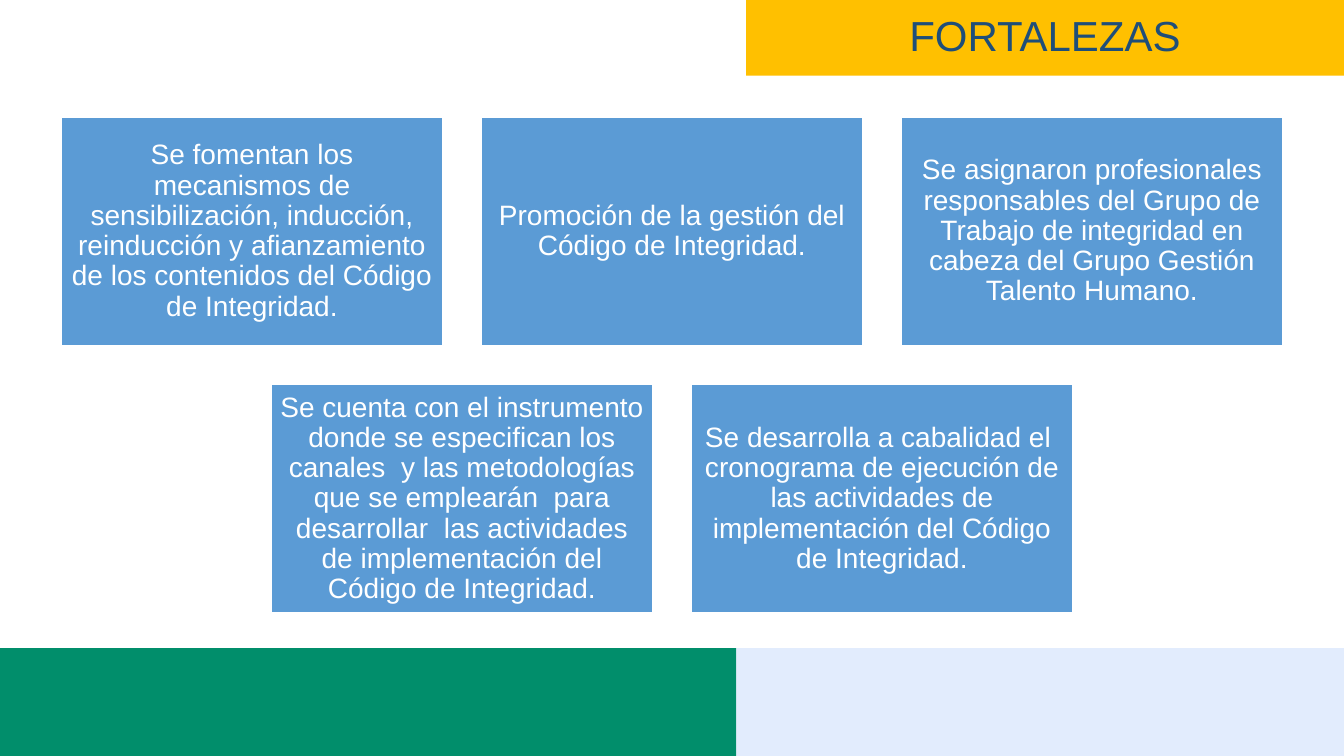
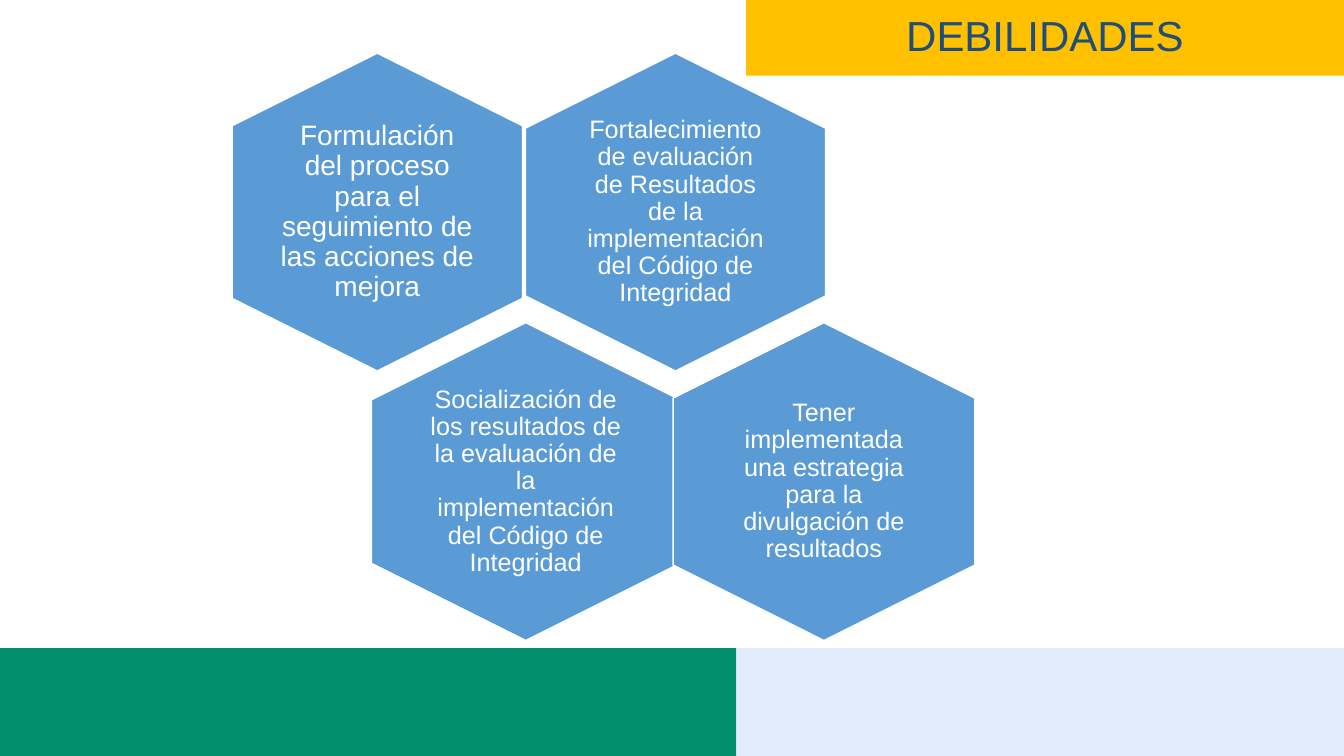
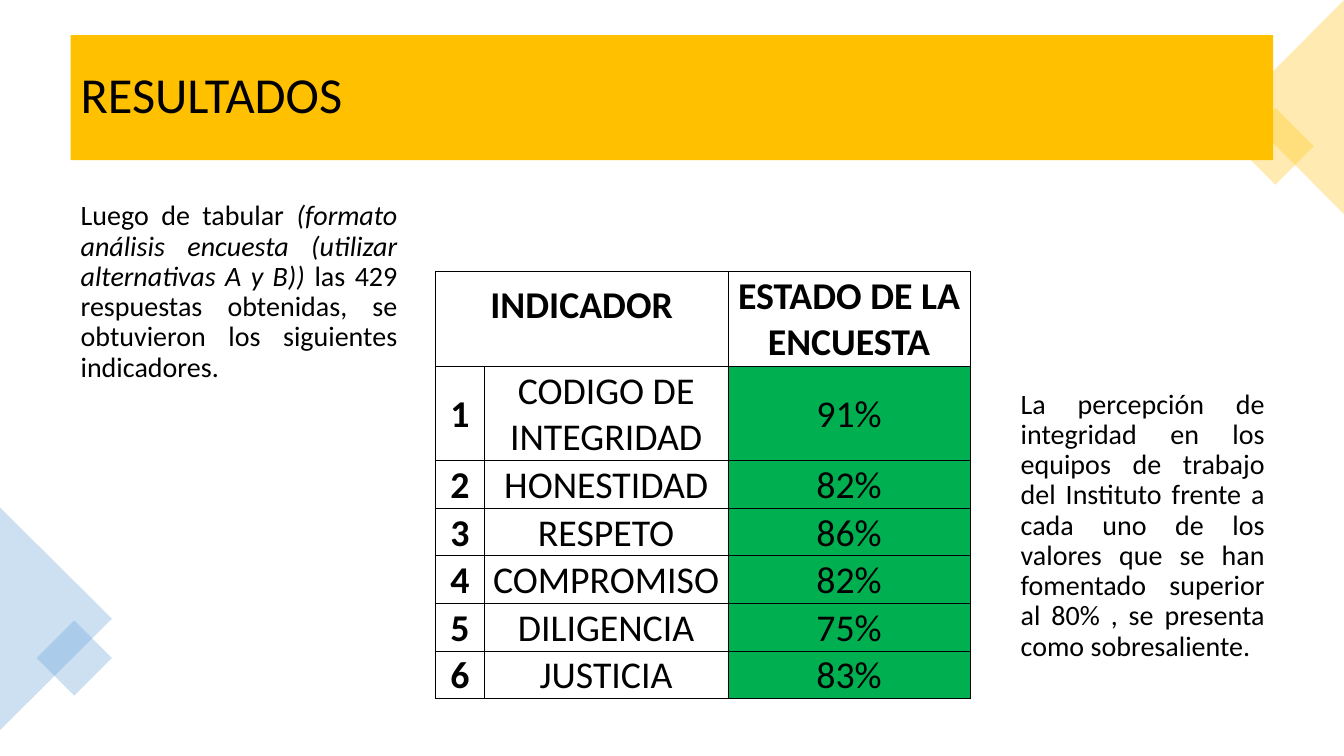
"""Build three slides on integrity: strengths, weaknesses and survey results."""
import pptx
import pptx.util
import pptx.dml.color
import pptx.enum.shapes
import pptx.enum.text
import pptx.oxml.ns
import lxml.etree

Pt = pptx.util.Pt
qn = pptx.oxml.ns.qn
KIND = pptx.enum.shapes.MSO_SHAPE
ALIGN = pptx.enum.text.PP_ALIGN
ANCHOR = pptx.enum.text.MSO_ANCHOR

WIDE, HIGH = 960, 540
HUES = {
    "white": "FFFFFF",
    "black": "000000",
    "navy": "1F4E79",
    "blue": "5B9BD5",
    "gold": "FFC000",
    "green": "018E6B",
    "pale": "E2ECFD",
    "good": "00B050",
}


def hue(name):
    return pptx.dml.color.RGBColor.from_string(HUES[name])


def write(frame, *parts, size=20, font="Arial", color="white", bold=False,
          align=ALIGN.CENTER, lead=0.9):
    para = frame.paragraphs[0]
    para.alignment = align
    para.line_spacing = lead
    for part in parts:
        text, slant = part if isinstance(part, tuple) else (part, False)
        run = para.add_run()
        run.text = text
        run.font.size = Pt(size)
        run.font.name = font
        run.font.bold = bold
        run.font.italic = slant
        run.font.color.rgb = hue(color)


def fit(frame, pad=None, anchor=ANCHOR.MIDDLE):
    frame.word_wrap = True
    frame.vertical_anchor = anchor
    if pad is not None:
        frame.margin_left = frame.margin_right = Pt(pad)
        frame.margin_top = frame.margin_bottom = Pt(pad)
    return frame


def block(slide, x, y, w, h, fill, kind=KIND.RECTANGLE, line=None, turn=0):
    shape = slide.shapes.add_shape(kind, Pt(x), Pt(y), Pt(w), Pt(h))
    shape.shadow.inherit = False
    shape.rotation = turn
    shape.fill.solid()
    shape.fill.fore_color.rgb = hue(fill)
    if line:
        shape.line.color.rgb = hue(line)
        shape.line.width = Pt(1)
    else:
        shape.line.fill.background()
    return shape


def label(slide, x, y, w, h, *parts, pad=None, anchor=ANCHOR.MIDDLE, **form):
    area = slide.shapes.add_textbox(Pt(x), Pt(y), Pt(w), Pt(h))
    write(fit(area.text_frame, pad, anchor), *parts, **form)


def title(slide, text, x=533, y=0, w=427, h=54, **form):
    bar = block(slide, x, y, w, h, "gold")
    write(fit(bar.text_frame), text, **{"size": 30, "color": "navy", **form})


def bands(slide):
    split, top = 526, 463
    block(slide, 0, top, split, HIGH - top, "green")
    block(slide, split, top, WIDE - split, HIGH - top, "pale")


def cards(slide, rows):
    w, h, top, step, drop = 273, 163.5, 83.5, 300, 191
    for row, texts in enumerate(rows):
        left = (WIDE - w - step * (len(texts) - 1)) / 2
        for col, text in enumerate(texts):
            card = block(slide, left + col * step, top + row * drop, w, h,
                         "blue", line="white")
            write(fit(card.text_frame, 5.7), text)


def hexes(slide, items):
    tall, deep = 227, 153
    for x, y, wide, pad, size, text in items:
        cell = block(slide, x - tall / 2, y - wide / 2, tall, wide, "blue",
                     KIND.HEXAGON, "white", 90)
        cell.adjustments[0] = 0.25
        inner = wide * 0.68
        label(slide, x - inner / 2, y - deep / 2, inner, deep, text,
              pad=pad, size=size)


def decor(slide, fill, items):
    for kind, x, y, w, h, turn in items:
        shape = block(slide, x - w / 2, y - h / 2, w, h, fill, kind, turn=turn)
        tint = shape.element.spPr.find(qn("a:solidFill"))[0]
        lxml.etree.SubElement(tint, qn("a:alpha")).set("val", "30000")


def edge(cell):
    props = cell._tc.get_or_add_tcPr()
    for side in "LRTB":
        line = lxml.etree.SubElement(props, qn("a:ln" + side))
        line.set("w", str(Pt(0.5)))
        paint = lxml.etree.SubElement(line, qn("a:solidFill"))
        tint = lxml.etree.SubElement(paint, qn("a:srgbClr"))
        tint.set("val", HUES["black"])


def grid(slide, x, y, cols, rows, data):
    table = slide.shapes.add_table(len(rows), len(cols), Pt(x), Pt(y),
                                   Pt(sum(cols)), Pt(sum(rows))).table
    table.first_row = table.horz_banding = False
    for col, width in zip(table.columns, cols):
        col.width = Pt(width)
    for row, height in zip(table.rows, rows):
        row.height = Pt(height)
    for r, texts in enumerate(data):
        for c, text in enumerate(texts):
            cell = table.cell(r, c)
            edge(cell)
            head = r == 0 and c == 0
            cell.margin_left = cell.margin_right = Pt(16 if head else 1.5)
            cell.margin_top = Pt(8 if head else 1.5)
            cell.margin_bottom = Pt(8 if head else 0)
            cell.vertical_anchor = ANCHOR.TOP if head else ANCHOR.MIDDLE
            if r and c == 2:
                cell.fill.solid()
                cell.fill.fore_color.rgb = hue("good")
            else:
                cell.fill.background()
            if text:
                write(cell.text_frame, text, size=27, font="Calibri",
                      color="black", bold=r == 0 or c == 0, lead=1.0)
    table.cell(0, 0).merge(table.cell(0, 1))


def strengths(slide):
    bands(slide)
    title(slide, "FORTALEZAS")
    cards(slide, [
        ["Se fomentan los mecanismos de sensibilización, inducción, "
         "reinducción y afianzamiento de los contenidos del Código de "
         "Integridad.",
         "Promoción de la gestión del Código de Integridad.",
         "Se asignaron profesionales responsables del Grupo de Trabajo de "
         "integridad en cabeza del Grupo Gestión Talento Humano."],
        ["Se cuenta con el instrumento donde se especifican los canales  y "
         "las metodologías que se emplearán  para desarrollar  las "
         "actividades de implementación del Código de Integridad.",
         "Se desarrolla a cabalidad el  cronograma de ejecución de las "
         "actividades de implementación del Código de Integridad."],
    ])


def limits(slide):
    bands(slide)
    title(slide, "DEBILIDADES")
    upper, lower = 151.5, 344
    hexes(slide, [
        (482.5, upper, 214.5, 5, 18,
         "Fortalecimiento de evaluación de Resultados de la implementación "
         "del Código de Integridad"),
        (269.5, upper, 207.5, 0, 20,
         "Formulación del proceso para el seguimiento de las acciones de "
         "mejora"),
        (375.5, lower, 220.5, 5, 18,
         "Socialización de los resultados de la evaluación de la "
         "implementación del Código de Integridad"),
        (588.5, lower, 215.5, 0, 18,
         "Tener implementada una estrategia para la divulgación de "
         "resultados"),
    ])


def results(slide):
    plain = {"font": "Calibri", "color": "black"}
    prose = {"align": ALIGN.JUSTIFY, "anchor": ANCHOR.TOP, **plain}
    title(slide, "RESULTADOS", 50.5, 25, 859, 89.5, size=36,
          align=ALIGN.LEFT, **plain)
    label(slide, 50.5, 140.5, 240.5, 346, "Luego de tabular ",
          ("(formato análisis encuesta (utilizar alternativas A y B)) ", True),
          "las 429 respuestas obtenidas, se obtuvieron los siguientes "
          "indicadores.", **prose)
    decor(slide, "blue", [
        (KIND.ISOSCELES_TRIANGLE, 40, 442, 159, 80, 90),
        (KIND.RECTANGLE, 53, 470, 38, 38, 45),
    ])
    decor(slide, "gold", [
        (KIND.RECTANGLE, 911, 104.5, 39, 39, 45),
        (KIND.ISOSCELES_TRIANGLE, 922, 76.5, 153, 76, 270),
    ])
    grid(slide, 311, 194, [35, 174, 173], [67.5] * 2 + [34] * 5, [
        ("INDICADOR", "", "ESTADO DE LA ENCUESTA"),
        ("1", "CODIGO DE INTEGRIDAD", "91%"),
        ("2", "HONESTIDAD", "82%"),
        ("3", "RESPETO", "86%"),
        ("4", "COMPROMISO", "82%"),
        ("5", "DILIGENCIA", "75%"),
        ("6", "JUSTICIA", "83%"),
    ])
    label(slide, 722, 275, 188.5, 245.5,
          "La percepción de integridad en los equipos de trabajo del "
          "Instituto frente a cada uno de los valores que se han fomentado "
          "superior al 80% , se presenta como sobresaliente.", **prose)


def main():
    deck = pptx.Presentation()
    deck.slide_width, deck.slide_height = Pt(WIDE), Pt(HIGH)
    for build in (strengths, limits, results):
        build(deck.slides.add_slide(deck.slide_layouts[6]))
    deck.save("out.pptx")


if __name__ == "__main__":
    main()
